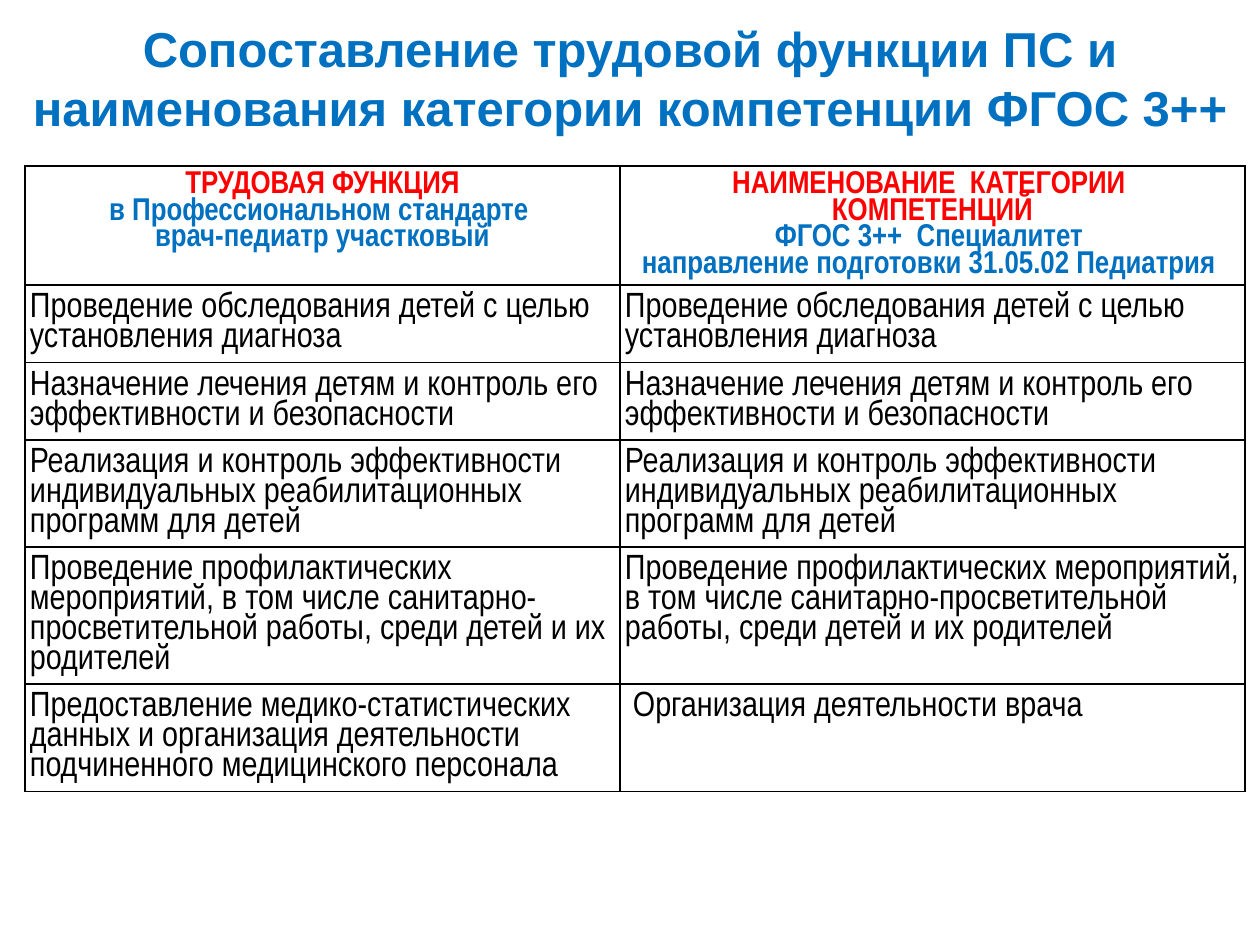
import pptx
import pptx.util
import pptx.dml.color
import pptx.enum.text
import pptx.oxml.ns
import lxml.etree

PX = 914400 // 126
ALIGN = pptx.enum.text.PP_ALIGN


def rgb(color):
    return pptx.dml.color.RGBColor.from_string(color)


def add_run(p, text, font, size, color, bold):
    r = p.add_run()
    r.text = text
    r.font.name = font
    r.font.size = pptx.util.Pt(size)
    r.font.bold = bold
    r.font.color.rgb = rgb(color)


prs = pptx.Presentation()
prs.slide_width = 1260 * PX
prs.slide_height = 945 * PX
s = prs.slides.add_slide(prs.slide_layouts[6])

# Table text
header = [
    ["ТРУДОВАЯ ФУНКЦИЯ", "в Профессиональном стандарте ", "врач-педиатр участковый"],
    ["НАИМЕНОВАНИЕ  КАТЕГОРИИ  КОМПЕТЕНЦИЙ", "ФГОС 3++  Специалитет ",
     "направление подготовки 31.05.02 Педиатрия "],
]
shared = [
    "Проведение обследования детей с целью установления диагноза",
    "Назначение лечения детям и контроль его эффективности и безопасности",
    "Реализация и контроль эффективности индивидуальных реабилитационных программ для детей",
    "Проведение профилактических мероприятий, в том числе санитарно-просветительной работы, "
    "среди детей и их родителей",
]
last = [
    "Предоставление медико-статистических данных и организация деятельности "
    "подчиненного медицинского персонала",
    " Организация деятельности врача",
]
rows = [header] + [[[text], [text]] for text in shared] + [[[text] for text in last]]
col_widths = [595, 625]
row_heights = [119, 77, 77, 107, 137, 107]

# Table
table = s.shapes.add_table(len(rows), len(col_widths), 25 * PX, 166 * PX,
                           sum(col_widths) * PX, sum(row_heights) * PX).table
for column, width in zip(table.columns, col_widths):
    column.width = width * PX
for row, height in zip(table.rows, row_heights):
    row.height = height * PX

for i, row in enumerate(rows):
    for j, lines in enumerate(row):
        cell = table.cell(i, j)
        if i > 0:
            cell.margin_left = cell.margin_right = 5 * PX
            cell.margin_top = cell.margin_bottom = 9 * PX
        tf = cell.text_frame
        for k, line in enumerate(lines):
            p = tf.paragraphs[0] if k == 0 else tf.add_paragraph()
            p.line_spacing = 0.9
            if i == 0:
                p.alignment = ALIGN.CENTER
                add_run(p, line, "Arial Narrow", 18, "FF0000" if k == 0 else "0070C0", True)
            else:
                p.alignment = ALIGN.LEFT
                add_run(p, line, "Arial Narrow", 20, "000000", False)

        # Borders go before the fill in the cell properties
        tcPr = cell._tc.get_or_add_tcPr()
        for side in ("a:lnL", "a:lnR", "a:lnT", "a:lnB"):
            ln = lxml.etree.SubElement(tcPr, pptx.oxml.ns.qn(side), w="12700")
            solid = lxml.etree.SubElement(ln, pptx.oxml.ns.qn("a:solidFill"))
            lxml.etree.SubElement(solid, pptx.oxml.ns.qn("a:srgbClr"), val="000000")
        cell.fill.solid()
        cell.fill.fore_color.rgb = rgb("FFFFFF")

# Title
sp = s.shapes.add_textbox(15 * PX, 17 * PX, 1230 * PX, 120 * PX)
tf = sp.text_frame
tf.word_wrap = True
tf.vertical_anchor = pptx.enum.text.MSO_ANCHOR.MIDDLE
p = tf.paragraphs[0]
p.alignment = ALIGN.CENTER
add_run(p, "Сопоставление трудовой функции ПС и наименования категории компетенции ФГОС 3++",
        "Arial", 28, "0070C0", True)

prs.save("out.pptx")
